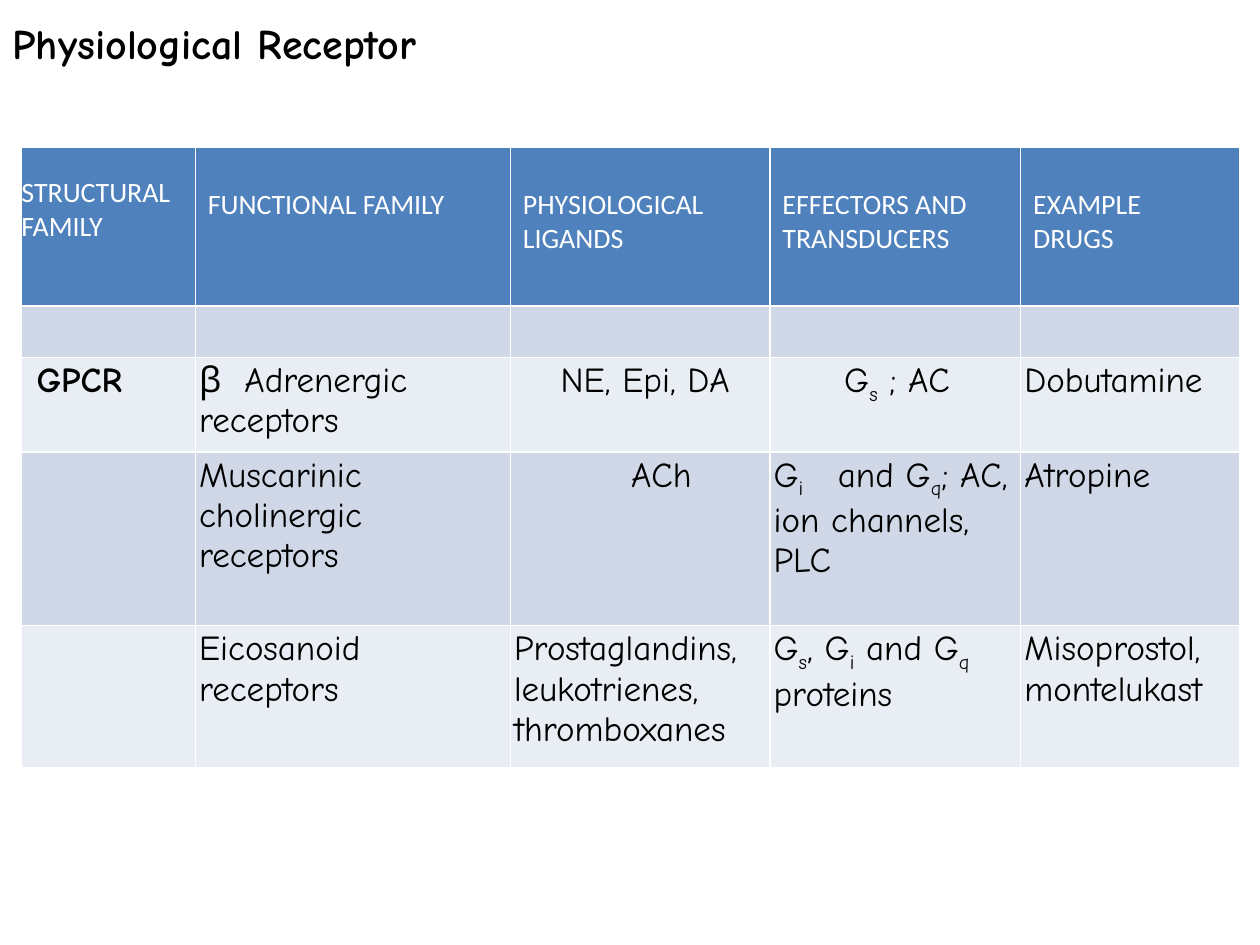
"""Builds a slide with a table of physiological receptors."""
import pptx
import pptx.dml.color
import pptx.enum.text
import pptx.oxml.ns
import pptx.util
from lxml import etree

RGBColor = pptx.dml.color.RGBColor
BLACK = RGBColor(0x00, 0x00, 0x00)
WHITE = RGBColor(0xFF, 0xFF, 0xFF)
BLUE = RGBColor(0x4F, 0x81, 0xBD)
BANDS = (RGBColor(0xD0, 0xD8, 0xE8), RGBColor(0xE9, 0xED, 0xF4))

COLUMN_WIDTHS = (13.8, 25, 20.6, 19.9, 17.4)
ROW_HEIGHTS = (12.6, 3.8, 7.5, 13.8, 11.3)
HEADINGS = (
    "STRUCTURAL FAMILY", "FUNCTIONAL FAMILY", "PHYSIOLOGICAL LIGANDS",
    "EFFECTORS AND TRANSDUCERS", "EXAMPLE DRUGS",
)
RECEPTORS = (
    ("",) * 5,
    ("GPCR", "β\tAdrenergic receptors", "NE, Epi, DA", "G_s_ ; AC", "Dobutamine"),
    ("", "Muscarinic cholinergic receptors", "ACh",
     "G_i_\tand G_q_; AC,\nion channels,\nPLC", "Atropine"),
    ("", "Eicosanoid receptors", "Prostaglandins, leukotrienes, thromboxanes",
     "G_s_, G_i_ and G_q_ proteins", "Misoprostol, montelukast"),
)
INDENTS = {"GPCR": 0.9, "NE, Epi, DA": 3.7, "ACh": 9.3, "G_s_ ; AC": 5.6}
TAB_STOPS = {"β": 3.6, "G_i_": 5.1}


class ReceptorSlide:
    """Holds the style and the current slide, on a grid of 100 by 75 units."""

    heading_font = "Calibri"
    body_font = "Comic Neue"

    def __init__(self, deck):
        self.unit = deck.slide_width / 100
        self.page = deck.slides.add_slide(deck.slide_layouts[5])

    def length(self, units):
        return pptx.util.Emu(round(units * self.unit))

    def add_spans(self, para, text, font, size, color, bold=False):
        for index, part in enumerate(text.split("_")):
            if part:
                span = para.add_run()
                span.text = part
                span.font.name = font
                span.font.size = pptx.util.Pt(size)
                span.font.bold = bold
                span.font.color.rgb = color
                if index % 2:
                    span.font._element.set("baseline", "-25000")

    def tab_stop(self, para, units):
        qualify = pptx.oxml.ns.qn
        stops = etree.SubElement(para._p.get_or_add_pPr(), qualify("a:tabLst"))
        etree.SubElement(stops, qualify("a:tab"), pos=str(self.length(units)), algn="l")

    def title(self, text, left, top, width, height):
        box = self.page.shapes.title
        box.left, box.top, box.width, box.height = map(
            self.length, (left, top, width, height))
        box.text_frame.vertical_anchor = pptx.enum.text.MSO_ANCHOR.MIDDLE
        para = box.text_frame.paragraphs[0]
        para.alignment = pptx.enum.text.PP_ALIGN.LEFT
        self.add_spans(para, text, self.body_font, 24, BLACK, bold=True)

    def fill(self, cell, color):
        cell.fill.solid()
        cell.fill.fore_color.rgb = color

    def heading(self, cell, text, first):
        self.fill(cell, BLUE)
        if first:
            cell.vertical_anchor = pptx.enum.text.MSO_ANCHOR.MIDDLE
            cell.margin_left = cell.margin_right = cell.margin_top = 0
            cell.margin_bottom = self.length(2.7)
        else:
            cell.margin_top = self.length(3.2)
        para = cell.text_frame.paragraphs[0]
        self.add_spans(para, text, self.heading_font, 16, WHITE)

    def body(self, cell, text, color):
        self.fill(cell, color)
        if not text:
            return
        margin = 0.3
        cell.margin_right = cell.margin_top = cell.margin_bottom = self.length(margin)
        cell.margin_left = self.length(margin + INDENTS.get(text, 0))
        frame = cell.text_frame
        for index, line in enumerate(text.split("\n")):
            para = frame.add_paragraph() if index else frame.paragraphs[0]
            if "\t" in line:
                self.tab_stop(para, TAB_STOPS[line.split("\t")[0]])
            self.add_spans(para, line, self.body_font, 20, BLACK, bold=text == "GPCR")

    def table(self, left, top):
        frame = self.page.shapes.add_table(
            len(ROW_HEIGHTS), len(COLUMN_WIDTHS), self.length(left), self.length(top),
            self.length(sum(COLUMN_WIDTHS)), self.length(sum(ROW_HEIGHTS)))
        table = frame.table
        for column, width in zip(table.columns, COLUMN_WIDTHS):
            column.width = self.length(width)
        for row, height in zip(table.rows, ROW_HEIGHTS):
            row.height = self.length(height)
        for index, text in enumerate(HEADINGS):
            self.heading(table.cell(0, index), text, first=index == 0)
        for number, texts in enumerate(RECEPTORS):
            for index, text in enumerate(texts):
                self.body(table.cell(number + 1, index), text, BANDS[number % 2])


def main():
    deck = pptx.Presentation()
    deck.slide_width = pptx.util.Inches(10)
    deck.slide_height = pptx.util.Inches(7.5)
    slide = ReceptorSlide(deck)
    slide.title("Physiological Receptor", 0, 0, 98.3, 6.7)
    slide.table(1.7, 11.7)
    deck.save("out.pptx")


if __name__ == "__main__":
    main()
